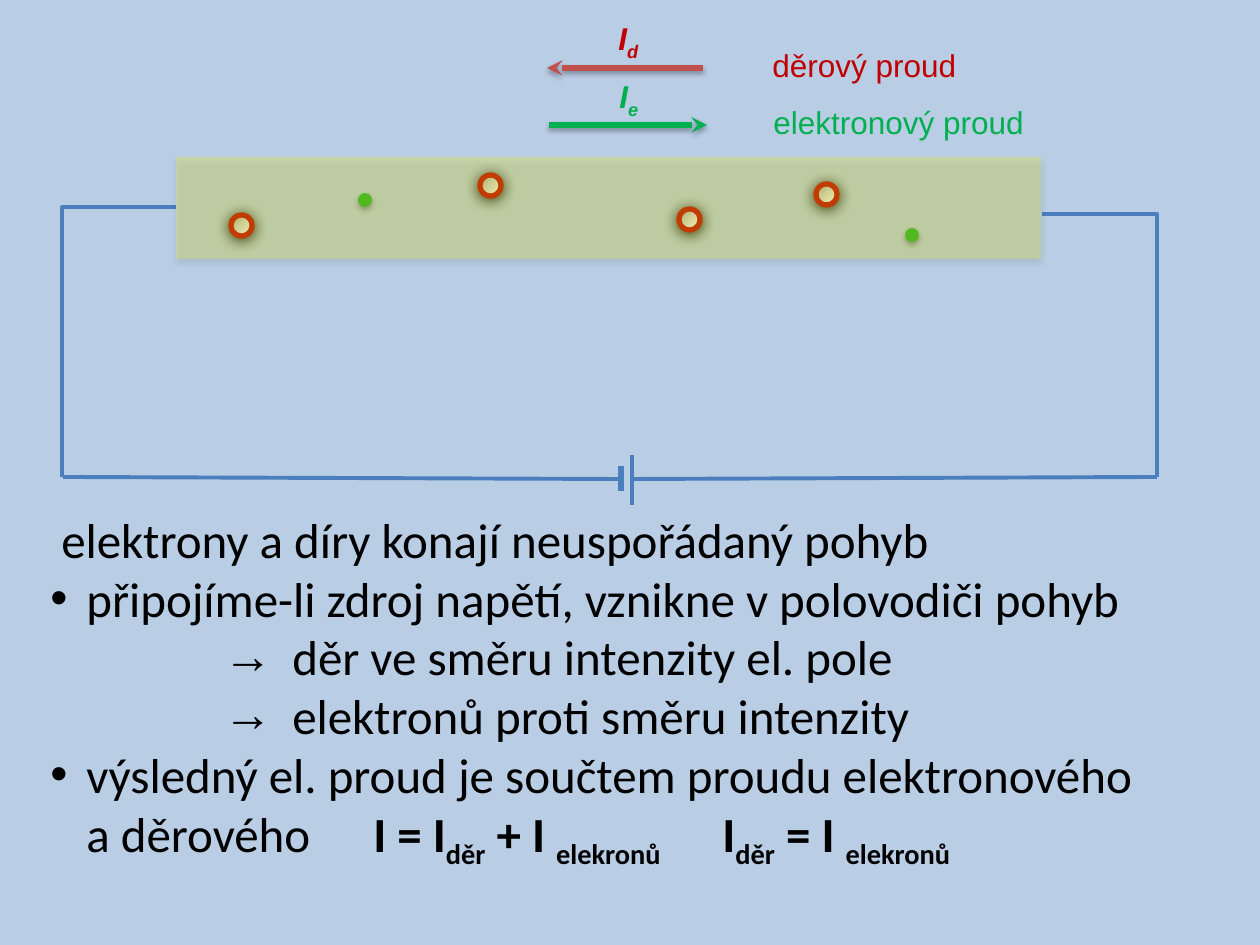
from dataclasses import dataclass

from lxml import etree
from pptx import Presentation
from pptx.dml.color import RGBColor
from pptx.enum.shapes import MSO_CONNECTOR, MSO_SHAPE
from pptx.enum.text import MSO_AUTO_SIZE
from pptx.oxml.ns import qn
from pptx.util import Emu, Pt

EMU_PER_PX = 914400 / 126
EMU_PER_POINT = 12700
STRAIGHT, ELBOW = MSO_CONNECTOR.STRAIGHT, MSO_CONNECTOR.ELBOW
OVAL, RECTANGLE = MSO_SHAPE.OVAL, MSO_SHAPE.RECTANGLE
FIT_SHAPE = MSO_AUTO_SIZE.SHAPE_TO_FIT_TEXT

SKY = RGBColor(0xB9, 0xCD, 0xE5)
BLACK = RGBColor(0, 0, 0)
WIRE_BLUE = RGBColor(0x4B, 0x7E, 0xBC)
HOLE_RED = RGBColor(0xC0, 0, 0)
ARROW_RED = RGBColor(0xC0, 0x50, 0x4D)
CURRENT_GREEN = RGBColor(0, 0xB0, 0x50)
ELECTRON_GREEN = RGBColor(0x20, 0xB2, 0x2E)
BAR_YELLOW = RGBColor(0xFF, 0xFF, 0)
HOLE_STOPS = ((0, "979797"), (50, "D7D7D7"), (100, "FFFFFF"))


@dataclass(frozen=True)
class Shadow:
    opacity: int
    blur: float
    distance: float


@dataclass(frozen=True)
class Line:
    start: tuple[int, int]
    end: tuple[int, int]
    color: RGBColor = WIRE_BLUE
    width: float = 2.25
    bent: bool = False
    arrow: bool = False


@dataclass(frozen=True)
class Current:
    symbol: str
    index: str
    name: str
    color: RGBColor
    symbol_at: tuple[int, int, int, int]
    name_at: tuple[int, int, int, int]
    arrow: Line


@dataclass(frozen=True)
class Item:
    lines: tuple[tuple[str, ...], ...]
    margin: int
    indent: int
    bullet: str = ""
    tabs: tuple[int, ...] = ()


SOFT_SHADOW = Shadow(35, 3.1, 1.8)
HOLE_SHADOW = Shadow(100, 8.5, 1)
HOLE_SIZE, ELECTRON_SIZE = 21, 14
HOLES = ((231, 215), (480, 175), (679, 209), (816, 184))
ELECTRONS = ((358, 193), (905, 228))

CIRCUIT = (
    Line((176, 207), (62, 477), bent=True),
    Line((63, 477), (619, 479)),
    Line((1042, 214), (1157, 477), bent=True),
    Line((1157, 477), (632, 479)),
    Line((632, 455), (632, 505)),
    Line((621, 466), (621, 491), width=3),
)
CURRENTS = (
    Current("I", "d", "děrový proud", HOLE_RED, (606, 13, 48, 50), (760, 40, 210, 50),
            Line((703, 68), (547, 68), ARROW_RED, 3, arrow=True)),
    Current("I", "e", "elektronový proud", CURRENT_GREEN, (607, 71, 45, 50), (761, 97, 278, 50),
            Line((549, 125), (707, 125), CURRENT_GREEN, 3, arrow=True)),
)
# Within a line the parts alternate: plain text, then bold text and its subscripts in turn.
ITEMS = (
    Item((("elektrony a díry konají neuspořádaný pohyb",),), 11, 0),
    Item((("připojíme-li zdroj napětí, vznikne v\u00a0polovodiči pohyb",),), 36, -36, "•"),
    Item((("děr ve směru intenzity el. pole",),), 242, -69, "→"),
    Item((("elektronů proti směru intenzity",),), 242, -69, "→"),
    Item((("výsledný el. proud je součtem proudu elektronového",),
          ("a děrového", "\tI = I", "děr", " + I ", "elekronů", "\tI", "děr", " = I ", "elekronů")),
         36, -36, "•", (323, 672)),
)


def px(length: float) -> Emu:
    return Emu(round(length * EMU_PER_PX))


def add_shadow(properties, shadow: Shadow | None) -> None:
    """Set the effect list, which stays empty when there is no shadow."""
    effects = properties.find(qn("a:effectLst"))
    if effects is None:
        effects = etree.SubElement(properties, qn("a:effectLst"))
    if shadow:
        outer = etree.SubElement(
            effects, qn("a:outerShdw"), blurRad=str(round(shadow.blur * EMU_PER_POINT)),
            dist=str(round(shadow.distance * EMU_PER_POINT)), dir="5400000", rotWithShape="0")
        color = etree.SubElement(outer, qn("a:srgbClr"), val="000000")
        etree.SubElement(color, qn("a:alpha"), val=str(shadow.opacity * 1000))


def add_line(slide, line: Line) -> None:
    kind = ELBOW if line.bent else STRAIGHT
    connector = slide.shapes.add_connector(kind, *map(px, line.start + line.end))
    connector.line.color.rgb = line.color
    connector.line.width = Pt(line.width)
    properties = connector._element.spPr
    if line.bent:
        properties.find(qn("a:prstGeom")).set("prst", "bentConnector2")
    if line.arrow:
        etree.SubElement(properties.find(qn("a:ln")), qn("a:tailEnd"), type="stealth")
    add_shadow(properties, SOFT_SHADOW if line.arrow else None)


def add_solid(slide, kind, area: tuple[int, ...], color: RGBColor, shadow: Shadow):
    shape = slide.shapes.add_shape(kind, *map(px, area))
    shape.fill.solid()
    shape.fill.fore_color.rgb = color
    shape.line.fill.background()
    shape.shadow.inherit = False
    add_shadow(shape._element.spPr, shadow)
    return shape


def add_hole(slide, left: int, top: int) -> None:
    hole = add_solid(slide, OVAL, (left, top, HOLE_SIZE, HOLE_SIZE), SKY, HOLE_SHADOW)
    hole.fill.gradient()
    hole.fill.gradient_angle = 315
    stops = hole._element.spPr.find(qn("a:gradFill")).find(qn("a:gsLst"))
    for stop in list(stops):
        stops.remove(stop)
    for position, color in HOLE_STOPS:
        stop = etree.SubElement(stops, qn("a:gs"), pos=str(position * 1000))
        etree.SubElement(stop, qn("a:srgbClr"), val=color)
    hole.line.color.rgb = HOLE_RED
    hole.line.width = Pt(3)


def add_span(para, text: str, *, size: int, font: str, color: RGBColor,
             bold: bool = False, italic: bool = False, subscript: bool = False) -> None:
    span = para.add_run()
    span.text = text
    span.font.size, span.font.name = Pt(size), font
    span.font.bold, span.font.italic = bold, italic
    span.font.color.rgb = color
    if subscript:
        span.font._element.set("baseline", "-25000")


def add_label(slide, area: tuple[int, ...]):
    box = slide.shapes.add_textbox(*map(px, area))
    box.text_frame.word_wrap = False
    box.text_frame.auto_size = FIT_SHAPE
    return box.text_frame.paragraphs[0]


def add_current(slide, current: Current) -> None:
    add_line(slide, current.arrow)
    style = {"size": 18, "font": "Arial", "color": current.color}
    para = add_label(slide, current.symbol_at)
    add_span(para, current.symbol, bold=True, italic=True, **style)
    add_span(para, current.index, bold=True, italic=True, subscript=True, **style)
    add_span(add_label(slide, current.name_at), current.name, **style)


def write_item(para, item: Item) -> None:
    properties = para._p.get_or_add_pPr()
    properties.set("marL", str(px(item.margin)))
    properties.set("indent", str(px(item.indent)))
    if item.bullet:
        etree.SubElement(properties, qn("a:buFont"), typeface="Arial")
        etree.SubElement(properties, qn("a:buChar"), char=item.bullet)
    else:
        etree.SubElement(properties, qn("a:buNone"))
    if item.tabs:
        stops = etree.SubElement(properties, qn("a:tabLst"))
        for position in item.tabs:
            etree.SubElement(stops, qn("a:tab"), pos=str(px(position)), algn="l")
    for number, parts in enumerate(item.lines):
        if number:
            para.add_line_break()
        for index, text in enumerate(parts):
            add_span(para, text, size=28, font="Calibri", color=BLACK,
                     bold=index > 0, subscript=index > 0 and index % 2 == 0)


def main() -> None:
    deck = Presentation()
    deck.slide_width, deck.slide_height = px(1260), px(945)
    slide = deck.slides.add_slide(deck.slide_layouts[6])
    slide.background.fill.solid()
    slide.background.fill.fore_color.rgb = SKY

    for left, top in ELECTRONS:
        add_solid(slide, OVAL, (left, top, ELECTRON_SIZE, ELECTRON_SIZE), ELECTRON_GREEN, SOFT_SHADOW)
    for left, top in HOLES:
        add_hole(slide, left, top)
    for line in CIRCUIT:
        add_line(slide, line)
    for current in CURRENTS:
        add_current(slide, current)

    bar = add_solid(slide, RECTANGLE, (176, 157, 865, 102), BAR_YELLOW, SOFT_SHADOW)
    bar_color = bar._element.spPr.find(qn("a:solidFill")).find(qn("a:srgbClr"))
    etree.SubElement(bar_color, qn("a:alpha"), val="23000")

    notes = slide.shapes.add_textbox(*map(px, (38, 503, 1182, 430))).text_frame
    notes.word_wrap = True
    for number, item in enumerate(ITEMS):
        write_item(notes.add_paragraph() if number else notes.paragraphs[0], item)
    deck.save("out.pptx")


if __name__ == "__main__":
    main()
